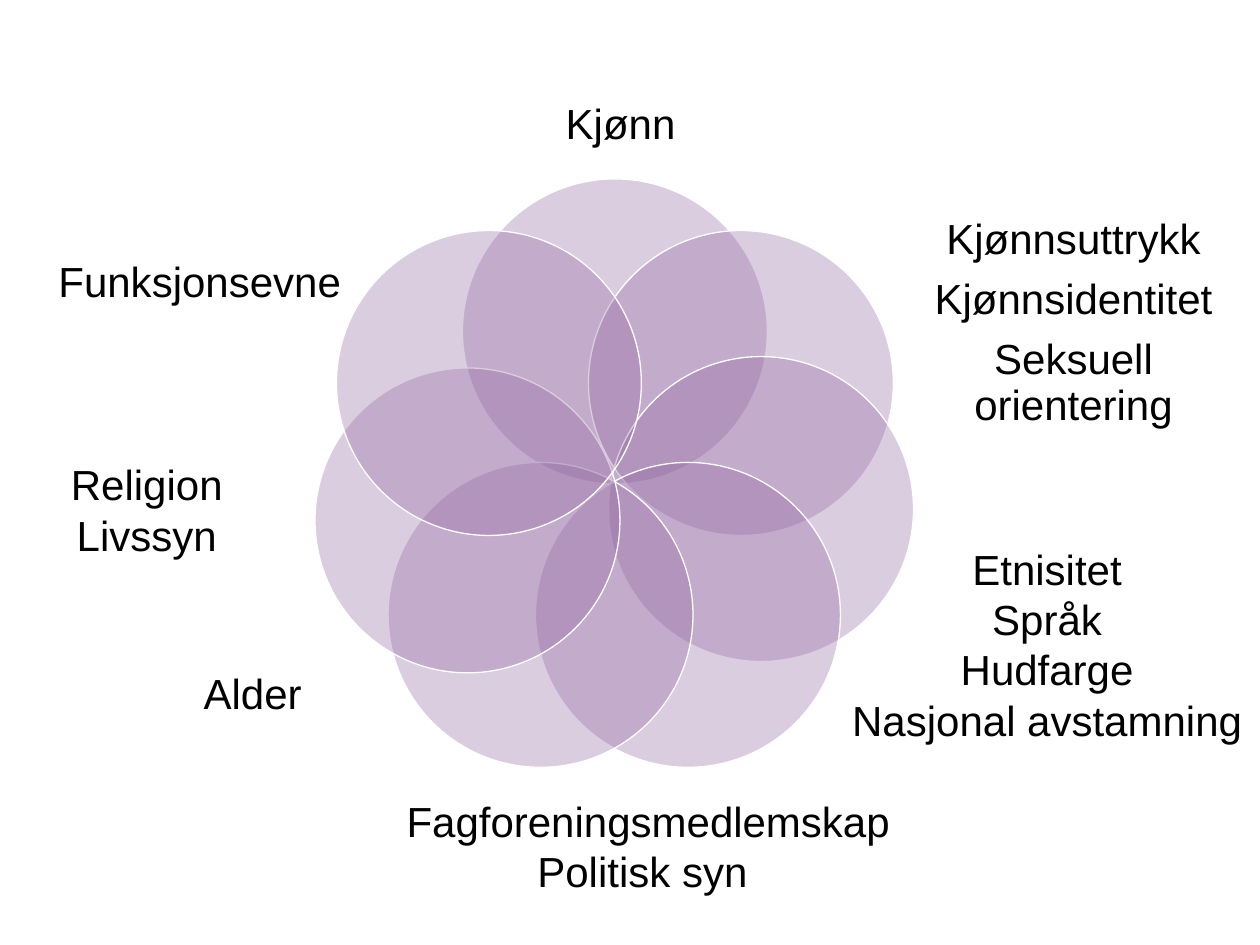
from dataclasses import dataclass

from lxml.etree import SubElement
from pptx import Presentation
from pptx.dml.color import RGBColor
from pptx.enum.shapes import MSO_SHAPE as Shape
from pptx.enum.text import MSO_ANCHOR as Anchor, PP_ALIGN as Align
from pptx.oxml.ns import qn
from pptx.slide import Slide
from pptx.util import Inches, Pt


@dataclass(frozen=True)
class Theme:
    petal: RGBColor = RGBColor(0x91, 0x66, 0xA0)
    petal_opacity: int = 32
    outline: RGBColor = RGBColor(0xFF, 0xFF, 0xFF)
    outline_width: float = 0.75
    text: RGBColor = RGBColor(0, 0, 0)
    font: str = "Arial"
    size: int = 24


@dataclass(frozen=True)
class Petal:
    left: float
    top: float


@dataclass(frozen=True)
class Label:
    left: float
    top: float
    width: float
    height: float
    lines: tuple[str, ...]
    line_spacing: float = 1.0
    space_after: float = 0


THEME = Theme()
DIAMETER = 2.42

TOP_PETAL = Petal(3.67, 1.42)
# Clockwise from the upper right
OTHER_PETALS = [
    Petal(4.67, 1.83),
    Petal(4.83, 2.83),
    Petal(4.25, 3.67),
    Petal(3.08, 3.67),
    Petal(2.5, 2.92),
    Petal(2.67, 1.83),
]

LABELS = [
    Label(7.33, 1.83, 2.38, 1.48,
          ("Kjønnsuttrykk", "Kjønnsidentitet", "Seksuell orientering"),
          line_spacing=0.9, space_after=0.35 * THEME.size),
    Label(6.62, 4, 3.38, 2.22,
          ("Etnisitet", "Språk", "Hudfarge", "Nasjonal avstamning")),
    Label(3.08, 5.92, 4.13, 1.58,
          ("Fagforeningsmedlemskap", "Politisk syn ")),
    Label(0.75, 4.83, 2.51, 1.34, ("Alder",)),
    Label(0, 3.25, 2.33, 1.58, ("Religion\vLivssyn",)),
    Label(0.33, 2.01, 2.51, 0.44, ("Funksjonsevne",)),
    Label(3.67, 0.25, 2.51, 1.45, ("Kjønn",)),
]


def apply_format(target: object, values: dict) -> None:
    for name, value in values.items():
        setattr(target, name, value)


def add_petal(page: Slide, petal: Petal) -> None:
    circle = page.shapes.add_shape(
        Shape.OVAL, Inches(petal.left), Inches(petal.top),
        Inches(DIAMETER), Inches(DIAMETER))
    circle.shadow.inherit = False
    circle.fill.solid()
    circle.fill.fore_color.rgb = THEME.petal
    color = circle.fill._xPr.find(qn("a:solidFill"))[0]
    SubElement(color, qn("a:alpha"), val=str(THEME.petal_opacity * 1000))
    circle.line.color.rgb = THEME.outline
    circle.line.width = Pt(THEME.outline_width)


def add_label(page: Slide, label: Label) -> None:
    box = page.shapes.add_textbox(
        Inches(label.left), Inches(label.top),
        Inches(label.width), Inches(label.height))
    frame = box.text_frame
    apply_format(frame, {
        "word_wrap": True, "vertical_anchor": Anchor.MIDDLE,
        "margin_left": 0, "margin_right": 0,
        "margin_top": 0, "margin_bottom": 0,
    })
    for index, line in enumerate(label.lines):
        para = frame.add_paragraph() if index else frame.paragraphs[0]
        apply_format(para, {
            "text": line, "alignment": Align.CENTER,
            "line_spacing": label.line_spacing,
            "space_after": Pt(label.space_after),
        })
        for span in para.runs:
            apply_format(span.font, {"name": THEME.font, "size": Pt(THEME.size)})
            span.font.color.rgb = THEME.text


def main() -> None:
    deck = Presentation()
    deck.slide_width, deck.slide_height = Inches(10), Inches(7.5)
    page = deck.slides.add_slide(deck.slide_layouts[6])
    add_petal(page, TOP_PETAL)
    for label in LABELS:
        add_label(page, label)
    for petal in OTHER_PETALS:
        add_petal(page, petal)
    deck.save("out.pptx")


if __name__ == "__main__":
    main()
